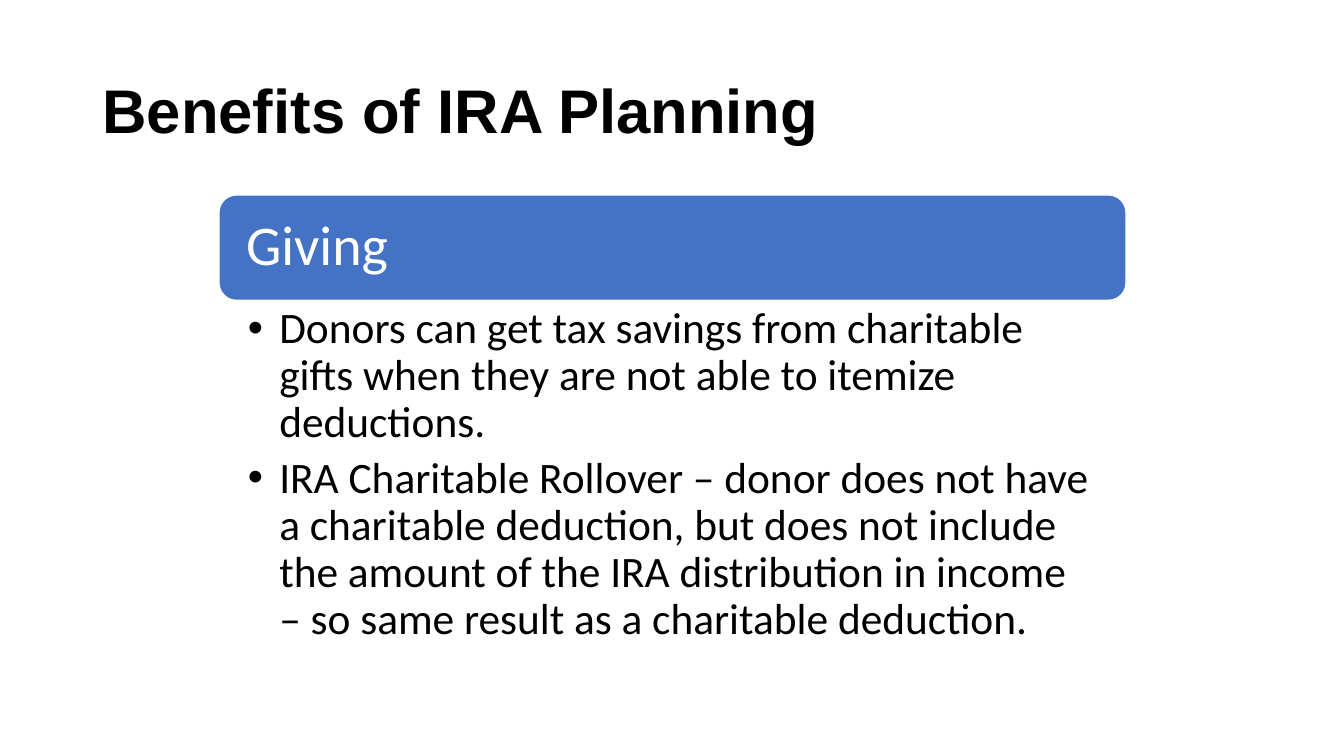
from lxml.etree import SubElement
from pptx import Presentation
from pptx.dml.color import RGBColor
from pptx.enum.shapes import MSO_SHAPE
from pptx.enum.text import MSO_ANCHOR, MSO_AUTO_SIZE, PP_ALIGN
from pptx.oxml.ns import qn
from pptx.util import Pt

COLORS = {"ink": "000000", "paper": "FFFFFF", "bar": "4472C4"}
POINTS = [
    "Donors can get tax savings from charitable gifts when they are not able "
    "to itemize deductions.",
    "IRA Charitable Rollover – donor does not have a charitable deduction, "
    "but does not include the amount of the IRA distribution in income – so "
    "same result as a charitable deduction.",
]


class Deck:
    head = "Arial"
    body = "Calibri"

    def __init__(self, width, height):
        self.show = Presentation()
        self.show.slide_width = Pt(width)
        self.show.slide_height = Pt(height)
        self.slide = self.show.slides.add_slide(self.show.slide_layouts[1])

    def color(self, name):
        return RGBColor.from_string(COLORS[name])

    def place(self, shape, box):
        shape.left, shape.top, shape.width, shape.height = map(Pt, box)

    def frame(self, shape, anchor, pads):
        frame = shape.text_frame
        frame.word_wrap = True
        frame.auto_size = MSO_AUTO_SIZE.NONE
        frame.vertical_anchor = anchor
        (frame.margin_left, frame.margin_top,
         frame.margin_right, frame.margin_bottom) = map(Pt, pads)
        return frame

    def add_text(self, para, text, size, font, color, bold=False, after=0):
        para.alignment = PP_ALIGN.LEFT
        para.line_spacing = 0.9
        para.space_before = Pt(0)
        para.space_after = Pt(after)
        run = para.add_run()
        run.text = text
        run.font.size = Pt(size)
        run.font.name = font
        run.font.bold = bold
        run.font.color.rgb = self.color(color)

    def title(self, text, box):
        shape = self.slide.shapes.title
        self.place(shape, box)
        frame = self.frame(shape, MSO_ANCHOR.MIDDLE, (7.2, 3.6, 7.2, 3.6))
        self.add_text(frame.paragraphs[0], text, 44, self.head, "ink", True)

    def bar(self, text, box):
        shape = self.slide.shapes.add_shape(
            MSO_SHAPE.ROUNDED_RECTANGLE, *map(Pt, box))
        shape.shadow.inherit = False
        shape.fill.solid()
        shape.fill.fore_color.rgb = self.color("bar")
        shape.line.color.rgb = self.color("paper")
        shape.line.width = Pt(1)
        frame = self.frame(shape, MSO_ANCHOR.MIDDLE, (15.8, 12, 15.8, 12))
        self.add_text(frame.paragraphs[0], text, 40, self.body, "paper")

    def bullets(self, items, box):
        shape = self.slide.placeholders[1]
        self.place(shape, box)
        frame = self.frame(shape, MSO_ANCHOR.TOP, (20.6, 4.3, 22.3, 4.3))
        for index, item in enumerate(items):
            para = frame.add_paragraph() if index else frame.paragraphs[0]
            self.add_text(para, item, 31, self.body, "ink", after=6.2)
            props = para._p.get_or_add_pPr()
            props.set("marL", str(Pt(22.5)))
            props.set("indent", str(Pt(-22.5)))
            SubElement(props, qn("a:buChar")).set("char", "•")

    def save(self):
        self.show.save("out.pptx")


def main():
    deck = Deck(960, 540)
    deck.title("Benefits of IRA Planning", (66, 28.8, 828, 104.4))
    deck.bar("Giving", (156.4, 139.2, 648, 75.4))
    deck.bullets(POINTS, (156.4, 214.6, 648, 254))
    deck.save()


if __name__ == "__main__":
    main()
